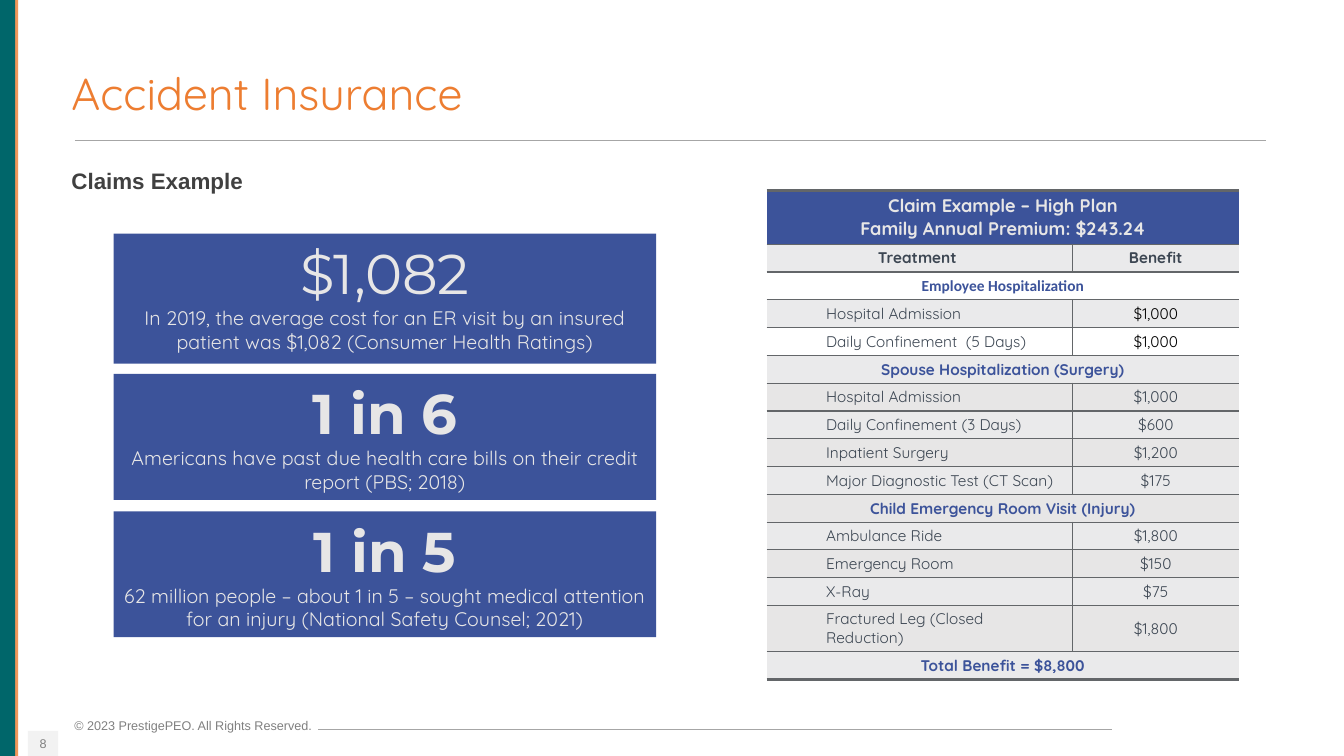
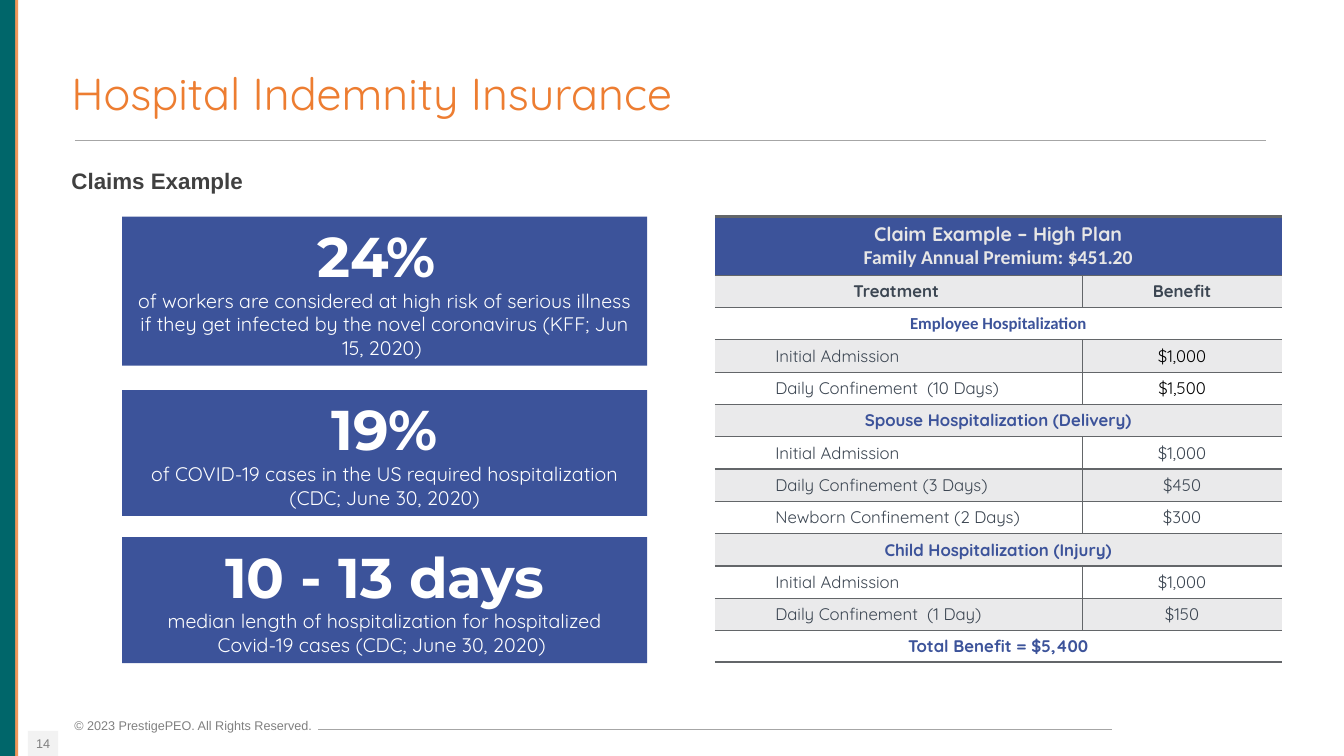
from dataclasses import dataclass

from lxml import etree
from pptx import Presentation
from pptx import util as u
from pptx.dml import color as dml
from pptx.enum import shapes, text
from pptx.oxml import ns

ORANGE, TEAL, NAVY = "ED7D31", "00666A", "3C539A"
INK, SLATE, BORDER = "404040", "3C4652", "636669"
WHITE, PALE, BAND, BLACK = "FFFFFF", "E7E6E6", "EAEAEB", "000000"
RULE, FOOTER, NUMBER_TILE = "A6A6A6", "808080", "F2F2F2"
BODY, HEADLINE, SANS, ALTERNATE = "Quicksand", "Montserrat", "Arial", "Calibri"
CENTER = text.PP_ALIGN.CENTER
MIDDLE = text.MSO_ANCHOR.MIDDLE


@dataclass(frozen=True)
class Fact:
    top: float
    height: float
    headline: str
    detail: str
    bold: bool = True


@dataclass(frozen=True)
class Row:
    label: str
    amount: str = ""
    height: float = 0
    font: str = BODY


@dataclass(frozen=True)
class Claim:
    left: float
    top: float
    columns: tuple[float, float]
    header_height: float
    row_height: float
    size: float
    premium: str
    premium_font: str
    insets: tuple[float, float]
    late_band: str
    rows: tuple[Row, ...]


@dataclass(frozen=True)
class Page:
    number: int
    title: str
    facts_left: float
    facts_width: float
    facts_color: str
    facts: tuple[Fact, ...]
    claim: Claim


def rgb(value: str) -> dml.RGBColor:
    return dml.RGBColor.from_string(value)


def write(frame, content: str, *, size: float, color: str, font: str = BODY,
          bold: bool = False, align=None, spacing: float | None = None,
          indent: float = 0) -> None:
    paragraph = frame.add_paragraph() if frame.text else frame.paragraphs[0]
    if indent:
        properties = paragraph._p.get_or_add_pPr()
        properties.set("marL", str(u.Pt(indent)))
        properties.set("indent", "0")
    paragraph.alignment = align
    if spacing:
        paragraph.line_spacing = spacing
    run = paragraph.add_run()
    run.text = content
    run.font.name = font
    run.font.size = u.Pt(size)
    run.font.bold = bold
    run.font.color.rgb = rgb(color)


def add_label(slide, left: float, top: float, width: float, height: float,
              content: str, **style) -> None:
    frame = slide.shapes.add_textbox(
        u.Pt(left), u.Pt(top), u.Pt(width), u.Pt(height)).text_frame
    frame.word_wrap = True
    write(frame, content, **style)


def add_block(slide, left: float, top: float, width: float, height: float,
              color: str, opacity: int = 100):
    block = slide.shapes.add_shape(
        shapes.MSO_SHAPE.RECTANGLE,
        u.Pt(left), u.Pt(top), u.Pt(width), u.Pt(height))
    block.shadow.inherit = False
    block.line.fill.background()
    block.fill.solid()
    block.fill.fore_color.rgb = rgb(color)
    if opacity < 100:
        tint = block._element.spPr.find(".//" + ns.qn("a:srgbClr"))
        etree.SubElement(tint, ns.qn("a:alpha")).set("val", str(opacity * 1000))
    block.text_frame.word_wrap = True
    block.text_frame.vertical_anchor = text.MSO_ANCHOR.TOP
    return block


def add_rule(slide, left: float, right: float, y: float, weight: float) -> None:
    rule = slide.shapes.add_connector(
        shapes.MSO_CONNECTOR.STRAIGHT, u.Pt(left), u.Pt(y), u.Pt(right), u.Pt(y))
    rule.line.color.rgb = rgb(RULE)
    rule.line.width = u.Pt(weight)
    etree.SubElement(rule._element.spPr, ns.qn("a:effectLst"))


def set_borders(cell, left: float, top: float, bottom: float) -> None:
    properties = cell._tc.get_or_add_tcPr()
    for side, weight in (("L", left), ("R", 0), ("T", top), ("B", bottom)):
        edge = etree.SubElement(properties, ns.qn(f"a:ln{side}"))
        if not weight:
            edge.set("w", "0")
            etree.SubElement(edge, ns.qn("a:noFill"))
            continue
        edge.set("w", str(u.Pt(weight)))
        fill = etree.SubElement(edge, ns.qn("a:solidFill"))
        etree.SubElement(fill, ns.qn("a:srgbClr")).set("val", BORDER)


def format_cell(cell, color: str, insets: tuple[float, float],
                left: float, top: float, bottom: float) -> None:
    set_borders(cell, left, top, bottom)
    cell.fill.solid()
    cell.fill.fore_color.rgb = rgb(color)
    cell.vertical_anchor = MIDDLE
    cell.margin_left = cell.margin_right = u.Pt(insets[0])
    cell.margin_top = cell.margin_bottom = u.Pt(insets[1])


def add_claim(slide, claim: Claim) -> None:
    heights = [claim.header_height,
               *(row.height or claim.row_height for row in claim.rows)]
    table = slide.shapes.add_table(
        len(heights), 2, u.Pt(claim.left), u.Pt(claim.top),
        u.Pt(sum(claim.columns)), u.Pt(sum(heights))).table
    table.first_row = table.horz_banding = False
    for column, width in zip(table.columns, claim.columns):
        column.width = u.Pt(width)
    for table_row, height in zip(table.rows, heights):
        table_row.height = u.Pt(height)

    last = len(claim.rows)
    for index in range(last + 1):
        even = WHITE if index < 5 else claim.late_band
        band = NAVY if index == 0 else BAND if index % 2 else even
        divided = index > 0 and bool(claim.rows[index - 1].amount)
        for column in range(2):
            format_cell(table.cell(index, column), band, claim.insets,
                        left=1 if divided and column else 0,
                        top=1 if index else 2,
                        bottom=2 if index == last else 1)
        if not divided:
            table.cell(index, 0).merge(table.cell(index, 1))

    header = table.cell(0, 0).text_frame
    for line, font in (("Claim Example – High Plan", BODY),
                       (f"Family Annual Premium: {claim.premium}", claim.premium_font)):
        write(header, line, size=claim.size + 2, color=PALE, font=font,
              bold=True, align=CENTER)

    for index, row in enumerate(claim.rows, 1):
        label, amount = (table.cell(index, column).text_frame for column in range(2))
        if index == 1:
            for frame, content in ((label, row.label), (amount, row.amount)):
                write(frame, content, size=claim.size, color=SLATE,
                      bold=True, align=CENTER)
        elif row.amount:
            write(label, row.label, size=claim.size, color=SLATE, indent=36)
            write(amount, row.amount, size=claim.size, align=CENTER,
                  color=BLACK if index < 5 else SLATE)
        else:
            write(label, row.label, size=claim.size, color=NAVY, font=row.font,
                  bold=True, align=CENTER)


def add_frame(slide, page: Page) -> None:
    add_rule(slide, 53.5, 904.5, 100.5, 0.5)
    add_block(slide, 1.5, 0, 11.5, 540, ORANGE, opacity=80)
    add_block(slide, 0, 0, 10.8, 540, TEAL)
    add_label(slide, 46, 509, 316, 18, "© 2023 PrestigePEO. All Rights Reserved.",
              size=9, color=FOOTER, font=SANS)
    tile = add_block(slide, 20, 522, 21.5, 18, NUMBER_TILE).text_frame
    tile.margin_left = tile.margin_right = tile.margin_top = tile.margin_bottom = 0
    tile.vertical_anchor = MIDDLE
    write(tile, str(page.number), size=9, color=FOOTER, font=SANS, align=CENTER)
    add_rule(slide, 227.5, 794, 521, 0.25)
    add_label(slide, 44, 48, 900, 45, page.title,
              size=32, color=ORANGE, spacing=0.9)
    add_label(slide, 44, 118, 247, 45, "Claims Example",
              size=16, color=INK, font=SANS, bold=True, spacing=0.9)


def add_page(deck, page: Page) -> None:
    slide = deck.slides.add_slide(deck.slide_layouts[6])
    add_frame(slide, page)
    for fact in page.facts:
        card = add_block(slide, page.facts_left, fact.top, page.facts_width,
                         fact.height, NAVY).text_frame
        write(card, fact.headline, size=40, color=page.facts_color,
              font=HEADLINE, bold=fact.bold, align=CENTER)
        write(card, fact.detail, size=14, color=page.facts_color, align=CENTER)
    add_claim(slide, page.claim)


ACCIDENT = Page(
    8, "Accident Insurance", 81.2, 387.5, PALE,
    (
        Fact(167, 92.8, "$1,082", "In 2019, the average cost for an ER visit by an "
             "insured patient was $1,082 (Consumer Health Ratings)", bold=False),
        Fact(267, 90, "1 in 6", "Americans have past due health care bills on "
             "their credit report (PBS; 2018)"),
        Fact(365.2, 90, "1 in 5", "62 million people – about 1 in 5 – sought medical "
             "attention for an injury (National Safety Counsel; 2021)"),
    ),
    Claim(547.6, 136, (218.5, 119), 38.5, 19.85, 11, "$243.24", BODY, (6.5, 2.7), PALE, (
        Row("Treatment ", "Benefit"),
        Row("Employee Hospitalization", font=ALTERNATE),
        Row("Hospital Admission", "$1,000"),
        Row("Daily Confinement  (5 Days)", "$1,000"),
        Row("Spouse Hospitalization (Surgery)"),
        Row("Hospital Admission", "$1,000"),
        Row("Daily Confinement (3 Days)", "$600"),
        Row("Inpatient Surgery", "$1,200"),
        Row("Major Diagnostic Test (CT Scan)", "$175"),
        Row("Child Emergency Room Visit (Injury)"),
        Row("Ambulance Ride", "$1,800"),
        Row("Emergency Room", "$150"),
        Row("X-Ray", "$75"),
        Row("Fractured Leg (Closed Reduction)", "$1,800", height=33),
        Row("Total Benefit = $8,800"),
    )),
)

HOSPITAL = Page(
    14, "Hospital Indemnity Insurance", 87.3, 375, WHITE,
    (
        Fact(154.8, 106.4, "24% ", "of workers are considered at high risk of serious "
             "illness if they get infected by the novel coronavirus "
             "(KFF; Jun 15, 2020) "),
        Fact(278.6, 90, "19%", "of COVID-19 cases in the US required hospitalization "
             "(CDC; June 30, 2020)"),
        Fact(383.6, 90, "10 - 13 days", "median length of hospitalization for "
             "hospitalized Covid-19 cases (CDC; June 30, 2020) "),
    ),
    Claim(510.6, 154.6, (262.5, 142.5), 42, 23.1, 12, "$451.20", ALTERNATE, (7.2, 3.6), WHITE, (
        Row("Treatment ", "Benefit"),
        Row("Employee Hospitalization", font=ALTERNATE),
        Row("Initial Admission", "$1,000"),
        Row("Daily Confinement  (10 Days)", "$1,500"),
        Row("Spouse Hospitalization (Delivery)"),
        Row("Initial Admission", "$1,000"),
        Row("Daily Confinement (3 Days)", "$450"),
        Row("Newborn Confinement (2 Days)", "$300"),
        Row("Child Hospitalization (Injury)"),
        Row("Initial Admission", "$1,000"),
        Row("Daily Confinement  (1 Day)", "$150"),
        Row("Total Benefit = $5,400", height=22.4),
    )),
)


def main() -> None:
    deck = Presentation()
    deck.slide_width, deck.slide_height = u.Pt(960), u.Pt(540)
    for page in (ACCIDENT, HOSPITAL):
        add_page(deck, page)
    deck.save("out.pptx")


if __name__ == "__main__":
    main()
